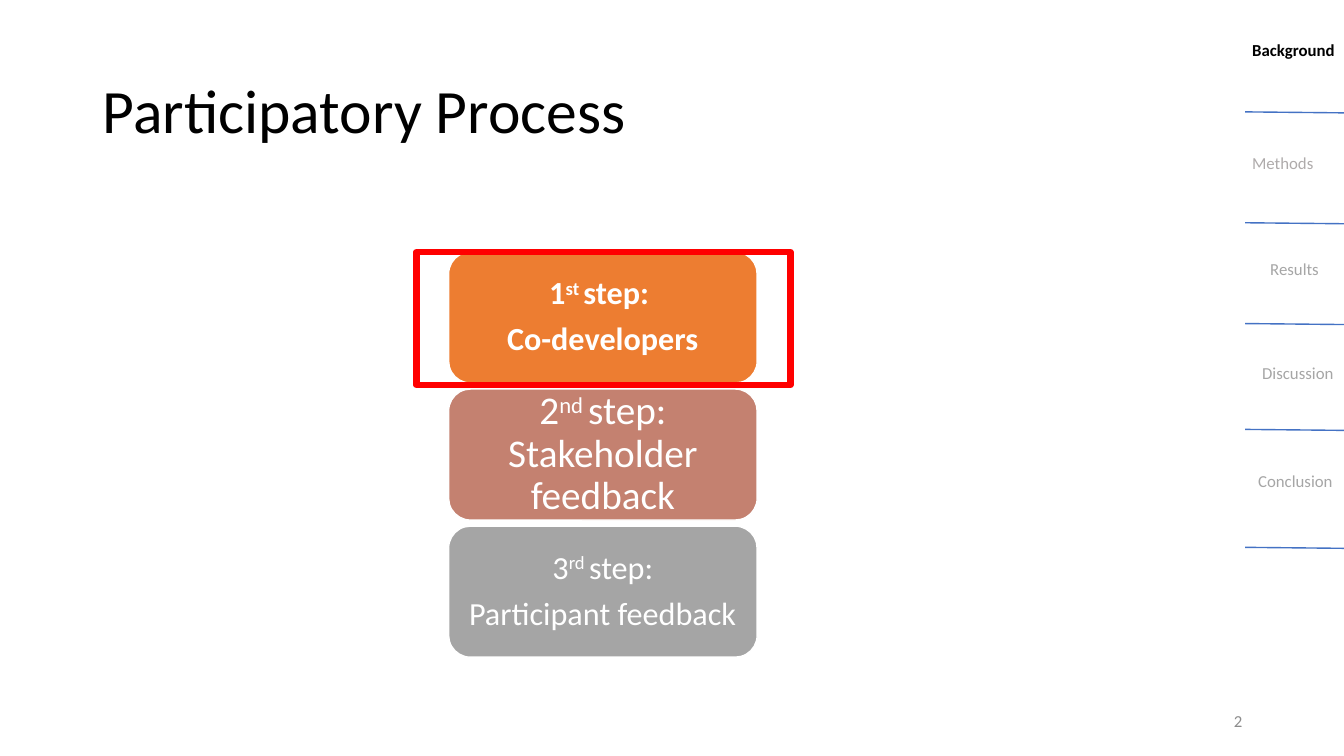
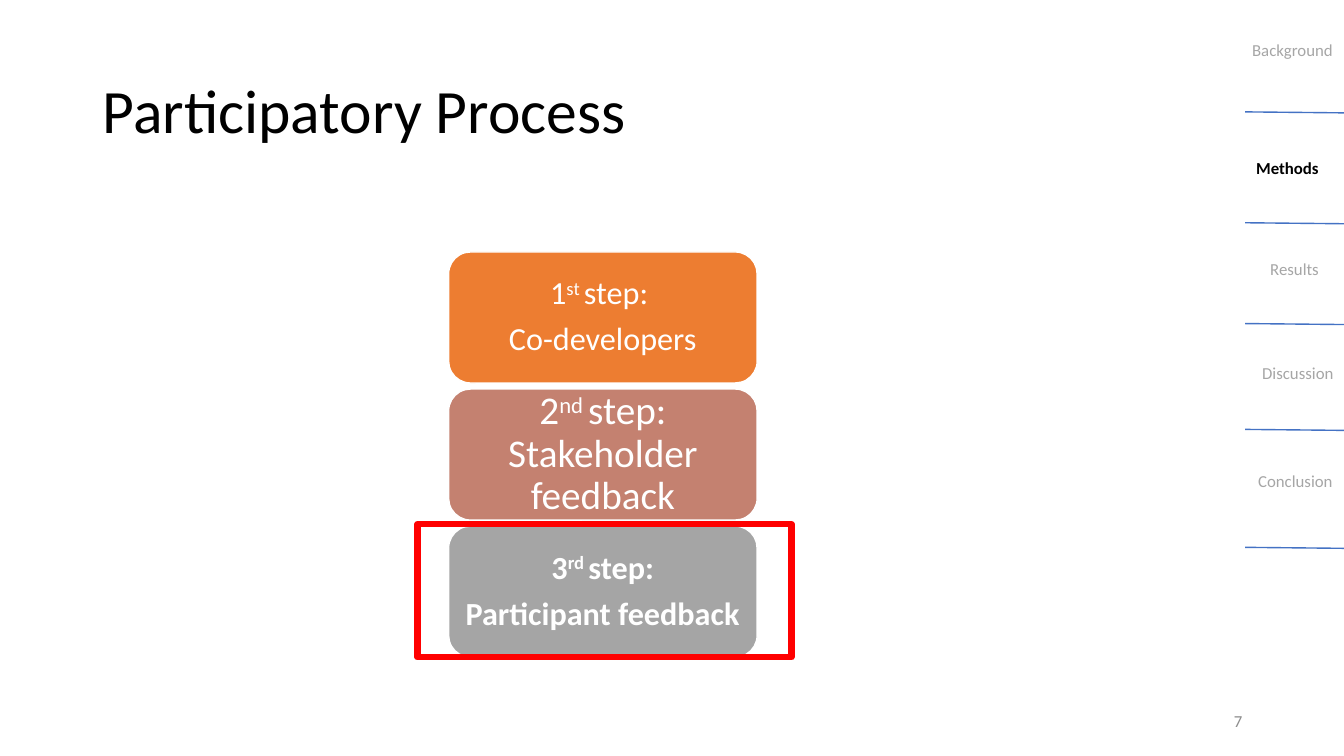
import pptx
import pptx.dml.color
import pptx.enum.shapes
import pptx.enum.text
import pptx.oxml.ns
import pptx.util
import lxml.etree

PX = 9144  # EMU per px: 100 px make one inch
FONT = "Calibri"
COLORS = {
    "black": "000000", "white": "FFFFFF", "number": "8C8C8C",
    "muted": "A6A6A6", "methods": "AFABAB", "divider": "4472C4",
    "orange": "ED7D31", "clay": "C48170", "gray": "A5A5A5", "frame": "FF0000",
}
ALIGN = pptx.enum.text.PP_ALIGN
ANCHOR = pptx.enum.text.MSO_ANCHOR
SHAPE = pptx.enum.shapes.MSO_SHAPE

# label, left, top, width, muted colour, (right, down) shift while active
SECTIONS = [
    ("Background", 1232, 35, 102, "muted", (0, 0)),
    ("Methods", 1232, 147, 82, "methods", (4, 5)),
    ("Results", 1250, 252, 69, "muted", (0, 0)),
    ("Discussion", 1242, 355, 92, "muted", (0, 0)),
    ("Conclusion", 1238, 462, 95, "muted", (0, 0)),
]
DIVIDER_TOPS = [111, 221, 321, 426, 543]

# fill, text size, paragraphs of (text, is superscript) runs
STEPS = [
    ("orange", 23, [[("1", False), ("st ", True), ("step: ", False)],
                    [("Co-developers", False)]]),
    ("clay", 28, [[("2", False), ("nd ", True),
                   ("step: Stakeholder feedback", False)]]),
    ("gray", 23, [[("3", False), ("rd ", True), ("step:", False)],
                  [("Participant feedback", False)]]),
]
STEP_TOP, STEP_PITCH = 250, 136

# number, active section, highlighted step, left and top of the highlight
SLIDES = [
    (2, "Background", 0, 413, 250),
    (7, "Methods", 2, 414, 520),
]


def px(value):
    return pptx.util.Emu(value * PX)


def rgb(name):
    return pptx.dml.color.RGBColor.from_string(COLORS[name])


class Deck:
    """Holds the presentation, its style and the current slide."""

    def __init__(self, width, height):
        self.presentation = pptx.Presentation()
        self.presentation.slide_width = px(width)
        self.presentation.slide_height = px(height)
        self.slide = None

    def add_slide(self):
        layout = self.presentation.slide_layouts[6]
        self.slide = self.presentation.slides.add_slide(layout)

    def style_font(self, font, size, color, bold=False):
        font.name = FONT
        font.size = pptx.util.Pt(size)
        font.bold = bold
        font.color.rgb = rgb(color)

    def text(self, box, text, size, color, bold=False, align=ALIGN.LEFT,
             anchor=ANCHOR.MIDDLE, wrap=True, spacing=None):
        frame = self.slide.shapes.add_textbox(*map(px, box)).text_frame
        frame.text = text
        frame.word_wrap = wrap
        frame.vertical_anchor = anchor
        paragraph = frame.paragraphs[0]
        paragraph.alignment = align
        paragraph.line_spacing = spacing
        self.style_font(paragraph.runs[0].font, size, color, bold)

    def shape(self, kind, box, fill, line, line_width):
        shape = self.slide.shapes.add_shape(kind, *map(px, box))
        shape.shadow.inherit = False
        if fill:
            shape.fill.solid()
            shape.fill.fore_color.rgb = rgb(fill)
        else:
            shape.fill.background()
        shape.line.color.rgb = rgb(line)
        shape.line.width = pptx.util.Pt(line_width)
        return shape

    def step(self, box, fill, size, paragraphs, bold):
        shape = self.shape(SHAPE.ROUNDED_RECTANGLE, box, fill, "white", 1)
        frame = shape.text_frame
        frame.word_wrap = True
        frame.vertical_anchor = ANCHOR.MIDDLE
        frame.margin_left = frame.margin_right = px(9)
        frame.margin_top = frame.margin_bottom = px(5)
        frame.text = "\n".join("" for _ in paragraphs)
        for paragraph, runs in zip(frame.paragraphs, paragraphs):
            paragraph.alignment = ALIGN.CENTER
            paragraph.line_spacing = 0.9
            paragraph.space_after = pptx.util.Pt(round(size * 0.35))
            for text, superscript in runs:
                run = paragraph.add_run()
                run.text = text
                self.style_font(run.font, size, "white", bold)
                if superscript:
                    run._r.get_or_add_rPr().set("baseline", "30000")

    def line(self, left, top, right, bottom):
        connector = self.slide.shapes.add_connector(
            pptx.enum.shapes.MSO_CONNECTOR.STRAIGHT,
            *map(px, (left, top, right, bottom)))
        connector.line.color.rgb = rgb("divider")
        connector.line.width = pptx.util.Pt(1)
        lxml.etree.SubElement(connector._element.spPr,
                              pptx.oxml.ns.qn("a:effectLst"))

    def navigation(self, active):
        """Section list on the right edge, with the active one in bold."""
        for label, left, top, width, color, (right, down) in SECTIONS:
            is_active = label == active
            if is_active:
                left, top, color = left + right, top + down, "black"
            self.text((left, top, width, 30), label, 12, color,
                      bold=is_active, anchor=ANCHOR.TOP, wrap=False)
        for top in DIVIDER_TOPS:
            self.line(1235, top, 1333, top + 1)


def main():
    deck = Deck(1333, 750)
    for number, section, highlighted, frame_left, frame_top in SLIDES:
        deck.add_slide()
        deck.text((92, 40, 1150, 145), "Participatory Process", 44, "black",
                  spacing=0.9)
        deck.text((942, 695, 300, 40), str(number), 12, "number",
                  align=ALIGN.RIGHT)
        for index, (fill, size, paragraphs) in enumerate(STEPS):
            box = (445, STEP_TOP + index * STEP_PITCH, 306, 130)
            deck.step(box, fill, size, paragraphs, index == highlighted)
        deck.navigation(section)
        deck.shape(SHAPE.RECTANGLE, (frame_left, frame_top, 371, 132),
                   None, "frame", 4.5)
    deck.presentation.save("out.pptx")


if __name__ == "__main__":
    main()
